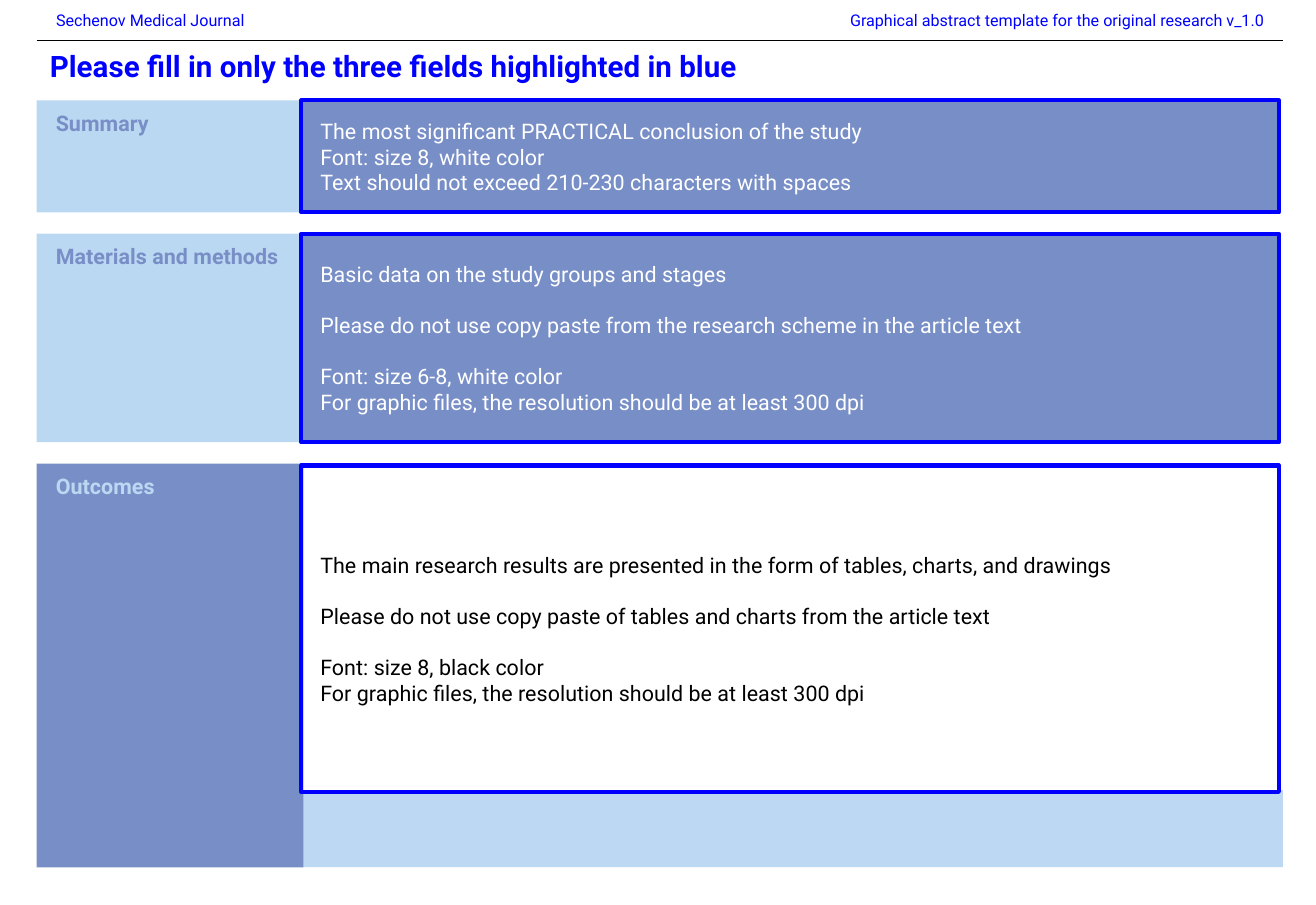
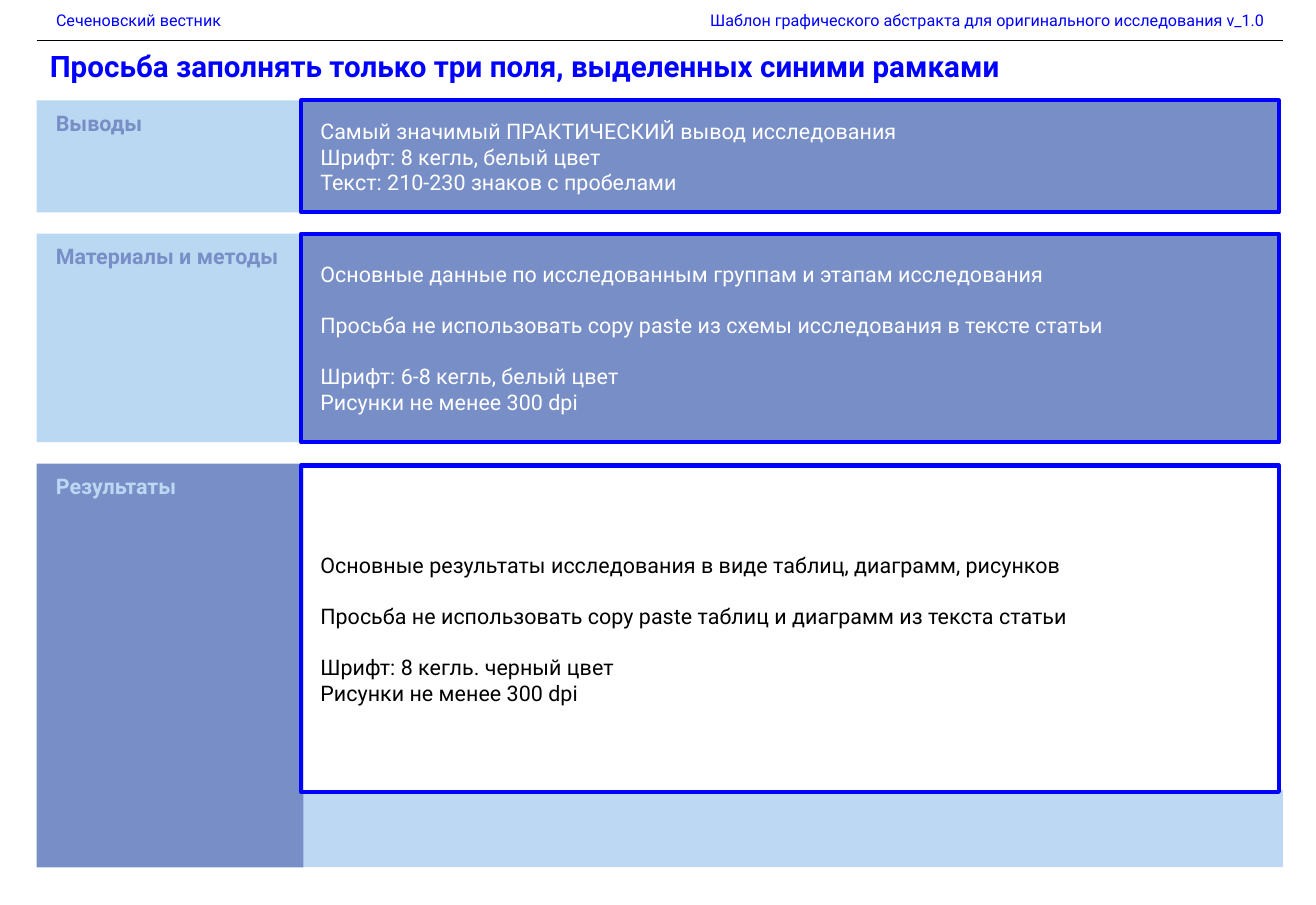
"""Build the graphical abstract template in English and Russian."""
import pptx
import pptx.dml.color
import pptx.enum.shapes
import pptx.enum.text
import pptx.oxml
import pptx.oxml.ns
import pptx.util

Inches, Pt = pptx.util.Inches, pptx.util.Pt
ALIGN, ANCHOR = pptx.enum.text.PP_ALIGN, pptx.enum.text.MSO_ANCHOR
RECTANGLE = pptx.enum.shapes.MSO_SHAPE.RECTANGLE

PALE, PALE_FOOT, MID = "BBD8F2", "BCD8F2", "788EC7"
BLUE, WHITE, BLACK = "0000FF", "FFFFFF", "000000"

HEADER = {"size": Pt(6), "bold": False}
TITLE = {"size": Pt(11), "bold": True}
LABEL = {"size": Pt(8), "bold": True}
BODY = {"size": Pt(8), "bold": False}

CM_PER_INCH = 2.54
LEFT, SPLIT = 0.19, 1.56
LABEL_WIDTH, FIELD_WIDTH, FOOT_WIDTH = 1.38, 5.06, 5.08
HEADER_COLUMNS = (1.97, 4.48)
GROUP_GAP = Pt(9.5)
PLAIN_TABLE_STYLE = "{2D5ABB26-0587-4C30-8999-92F81FD0307C}"

BANDS = [
    {"top": 0.52, "label_height": 0.58, "field_top": 0.52, "field_height": 0.58,
     "label_fill": PALE, "label_color": MID, "field_fill": MID, "field_color": WHITE},
    {"top": 1.21, "label_height": 1.08, "field_top": 1.21, "field_height": 1.08,
     "label_fill": PALE, "label_color": MID, "field_fill": MID, "field_color": WHITE},
    {"top": 2.4, "label_height": 2.09, "field_top": 2.41, "field_height": 1.69,
     "label_fill": MID, "label_color": PALE, "field_fill": None, "field_color": BLACK},
]

PAGES = [
    {
        "header": ("Sechenov Medical Journal",
                   "Graphical abstract template for the original research v_1.0"),
        "title": "Please fill in only the three fields highlighted in blue",
        "bands": [
            ("Summary", [
                ["The most significant PRACTICAL conclusion of the study",
                 "Font: size 8, white color",
                 "Text should not exceed 210-230 characters with spaces"]]),
            ("Materials and methods", [
                ["Basic data on the study groups and stages"],
                ["Please do not use copy paste from the research scheme in the article text"],
                ["Font: size 6-8, white color",
                 "For graphic files, the resolution should be at least 300 dpi"]]),
            ("Outcomes", [
                ["The main research results are presented in the form of tables, charts, and drawings"],
                ["Please do not use copy paste of tables and charts from the article text"],
                ["Font: size 8, black color",
                 "For graphic files, the resolution should be at least 300 dpi"]]),
        ],
    },
    {
        "header": ("Сеченовский вестник",
                   "Шаблон графического абстракта для оригинального исследования v_1.0"),
        "title": "Просьба заполнять только три поля, выделенных синими рамками",
        "bands": [
            ("Выводы", [
                ["Самый значимый ПРАКТИЧЕСКИЙ вывод исследования",
                 "Шрифт: 8 кегль, белый цвет",
                 "Текст: 210-230 знаков с пробелами"]]),
            ("Материалы и методы", [
                ["Основные данные по исследованным группам и этапам исследования"],
                ["Просьба не использовать copy paste из схемы исследования в тексте статьи"],
                ["Шрифт: 6-8 кегль, белый цвет",
                 "Рисунки не менее 300 dpi"]]),
            ("Результаты", [
                ["Основные результаты исследования в виде таблиц, диаграмм, рисунков"],
                ["Просьба не использовать copy paste таблиц и диаграмм из текста статьи"],
                ["Шрифт: 8 кегль. черный цвет",
                 "Рисунки не менее 300 dpi"]]),
        ],
    },
]


def paint(fill, color):
    if color is None:
        fill.background()
    else:
        fill.solid()
        fill.fore_color.rgb = pptx.dml.color.RGBColor.from_string(color)


def write(frame, groups, style, color, align):
    frame.word_wrap = True
    lines = [(text, group > 0 and row == 0)
             for group, texts in enumerate(groups) for row, text in enumerate(texts)]
    for index, (text, gap) in enumerate(lines):
        para = frame.add_paragraph() if index else frame.paragraphs[0]
        para.alignment = align
        if gap:
            para.space_before = GROUP_GAP
        span = para.add_run()
        span.text = text
        for name, value in {"name": "Roboto", **style}.items():
            setattr(span.font, name, value)
        paint(span.font.fill, color)


deck = pptx.Presentation()
deck.slide_width = Inches(17.3 / CM_PER_INCH)
deck.slide_height = Inches(11.9 / CM_PER_INCH)

for content in PAGES:
    page = deck.slides.add_slide(deck.slide_layouts[6])

    foot = page.shapes.add_shape(
        RECTANGLE, Inches(SPLIT), Inches(4.09), Inches(FOOT_WIDTH), Inches(0.4))
    foot.shadow.inherit = False
    foot.line.fill.background()
    paint(foot.fill, PALE_FOOT)

    for band, (label, groups) in zip(BANDS, content["bands"]):
        label_box = page.shapes.add_shape(
            RECTANGLE, Inches(LEFT), Inches(band["top"]),
            Inches(LABEL_WIDTH), Inches(band["label_height"]))
        field_box = page.shapes.add_shape(
            RECTANGLE, Inches(SPLIT), Inches(band["field_top"]),
            Inches(FIELD_WIDTH), Inches(band["field_height"]))
        for box, part, line, anchor, texts, style in (
                (label_box, "label", None, ANCHOR.TOP, [[label]], LABEL),
                (field_box, "field", BLUE, ANCHOR.MIDDLE, groups, BODY)):
            box.shadow.inherit = False
            paint(box.fill, band[part + "_fill"])
            paint(box.line.fill, line)
            box.text_frame.vertical_anchor = anchor
            write(box.text_frame, texts, style, band[part + "_color"], ALIGN.JUSTIFY)
        field_box.line.width = Pt(1.5)

    table = page.shapes.add_table(
        1, 2, Inches(LEFT), Inches(0.01), Inches(sum(HEADER_COLUMNS)), Inches(0.2)).table
    table.first_row = table.horz_banding = False
    table._tbl.tblPr.find(pptx.oxml.ns.qn("a:tableStyleId")).text = PLAIN_TABLE_STYLE
    for column, (width, text, align) in enumerate(
            zip(HEADER_COLUMNS, content["header"], (ALIGN.LEFT, ALIGN.RIGHT))):
        table.columns[column].width = Inches(width)
        cell = table.cell(0, column)
        write(cell.text_frame, [[text]], HEADER, BLUE, align)
        paint(cell.fill, None)
        border = pptx.oxml.parse_xml(
            f'<a:lnB {pptx.oxml.ns.nsdecls("a")} w="{Pt(0.5)}"><a:solidFill>'
            f'<a:srgbClr val="{BLACK}"/></a:solidFill></a:lnB>')
        cell._tc.get_or_add_tcPr().insert(0, border)

    title = page.shapes.add_textbox(Inches(0.16), Inches(0.2), Inches(6.46), Inches(0.29))
    title.text_frame.auto_size = pptx.enum.text.MSO_AUTO_SIZE.SHAPE_TO_FIT_TEXT
    write(title.text_frame, [[content["title"]]], TITLE, BLUE, ALIGN.LEFT)

deck.save("out.pptx")
